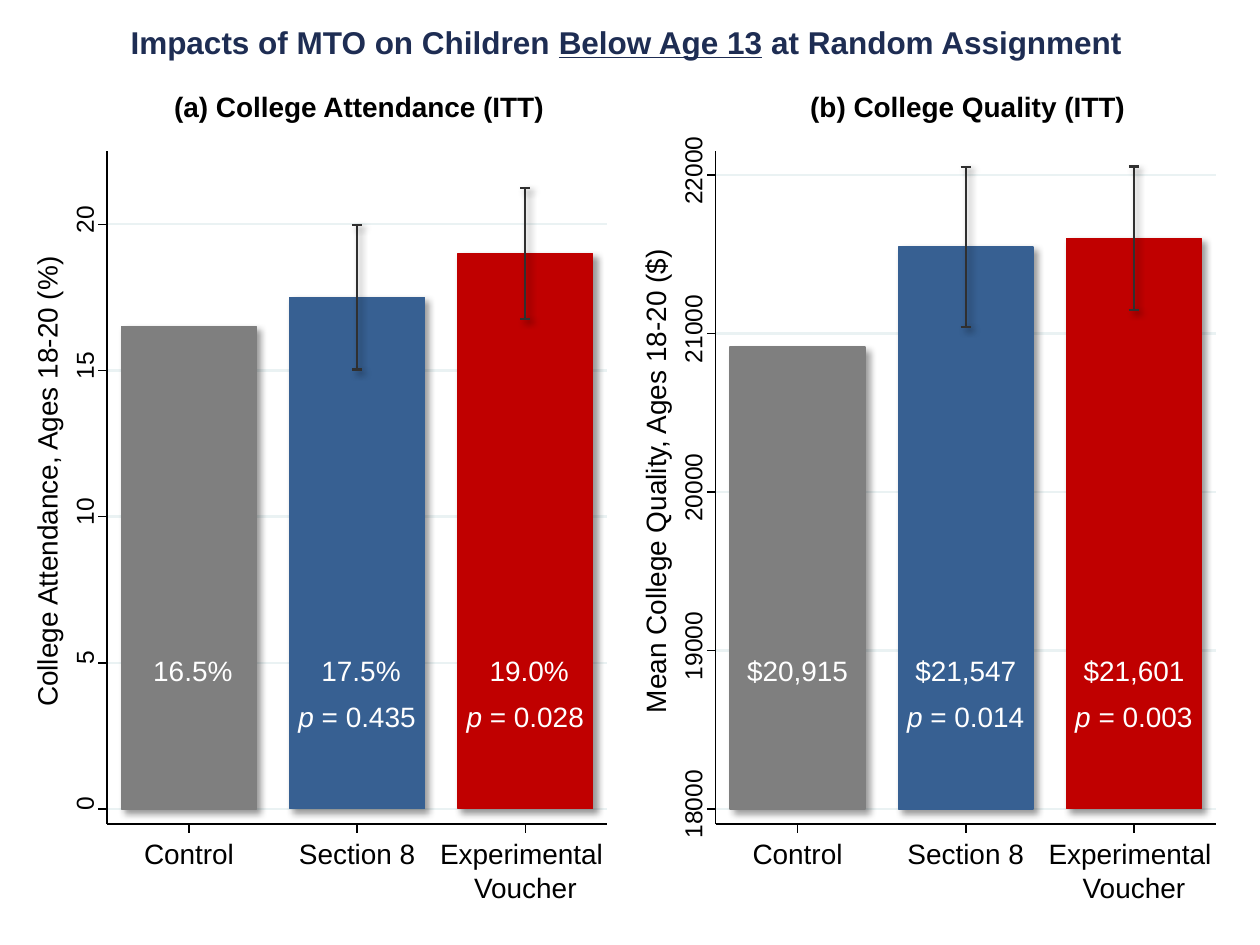
from dataclasses import dataclass
from lxml.etree import SubElement as Sub
from pptx import Presentation
from pptx.dml.color import RGBColor as RGB
from pptx.enum.shapes import MSO_CONNECTOR as Conn, MSO_SHAPE as Kind
from pptx.enum.text import MSO_AUTO_SIZE as Fit, PP_ALIGN as Align
from pptx.oxml.ns import qn
from pptx.util import Inches, Pt


@dataclass(frozen=True)
class Theme:
    font = "Arial"
    navy, black, white = "1E2D53", "000000", "FFFFFF"
    grid, whisk = "EAF2F3", "303030"
    bars = ("7F7F7F", "376092", "C00000")
    head, body, tick = 18, 16, 14
    thin, wide = 0.88, 1.25


@dataclass(frozen=True)
class Box:
    x: float
    y: float
    w: float
    h: float


T = Theme()
NAMES = ("Control", "Section 8", "Experimental \nVoucher")
NAME_W = (0.72, 0.93, 1.37)
BAR_W, STEP, FIRST = 1.07, 1.335, 0.65  # bar width, pitch, first centre
BASE = 0.12  # gap from axis up to the lowest tick


def effects(shape, shadow):
    """Give a shape a soft shadow, or an empty effect list."""
    props = shape._element.spPr
    for old in props.findall(qn("a:effectLst")):
        props.remove(old)
    fx = Sub(props, qn("a:effectLst"))
    if shadow:
        drop = Sub(fx, qn("a:outerShdw"), blurRad=str(Pt(4)), dist=str(Pt(3)),
                   dir="2700000", algn="tl", rotWithShape="0")
        tint = Sub(drop, qn("a:srgbClr"), val=T.black)
        Sub(tint, qn("a:alpha"), val="40000")


def line(slide, x1, y1, x2, y2, color, width, shadow=False):
    rule = slide.shapes.add_connector(
        Conn.STRAIGHT, *(Inches(v) for v in (x1, y1, x2, y2)))
    rule.line.color.rgb = RGB.from_string(color)
    rule.line.width = Pt(width)
    effects(rule, shadow)


def text(slide, cx, cy, w, h, runs, size=T.body, color=T.black, pad=False,
         wrap=False, align=Align.CENTER, turn=0):
    """Place text around a centre; runs are (words, font values) pairs."""
    item = slide.shapes.add_textbox(
        Inches(cx - w / 2), Inches(cy - h / 2), Inches(w), Inches(h))
    item.rotation = turn
    frame = item.text_frame
    form = {"word_wrap": wrap, "auto_size": Fit.SHAPE_TO_FIT_TEXT}
    if not pad:
        form.update(dict.fromkeys(("margin_left", "margin_right",
                                   "margin_top", "margin_bottom"), 0))
    for key, val in form.items():
        setattr(frame, key, val)
    para = frame.paragraphs[0]
    para.alignment = align
    for words, style in runs:
        for n, part in enumerate(words.split("\n")):
            if n:
                para = frame.add_paragraph()
                para.alignment = align
            run = para.add_run()
            run.text = part
            look = {"name": T.font, "size": Pt(size), **style}
            for key, val in look.items():
                setattr(run.font, key, val)
            run.font.color.rgb = RGB.from_string(color)


def heading(slide, box):
    bold = {"bold": True}
    runs = [("Impacts of MTO on Children ", bold),
            ("Below Age 13", {"bold": True, "underline": True}),
            (" at Random Assignment", bold)]
    text(slide, box.x + box.w / 2, box.y + box.h / 2, box.w, box.h, runs,
         T.head, T.navy, pad=True, wrap=True)


def panel(slide, box, data):
    foot, right = box.y + box.h, box.x + box.w
    ticks = data["ticks"]
    unit = data["rise"] / (ticks[-1] - ticks[0])
    mids = [box.x + FIRST + STEP * i for i in range(len(NAMES))]

    def level(value):
        return foot - BASE - (value - ticks[0]) * unit

    # Grid
    for tick in ticks:
        y = level(tick)
        line(slide, box.x, y, right, y, T.grid, T.wide)

    # Bars
    for mid, value, color in zip(mids, data["means"], T.bars):
        top = level(value)
        bar = slide.shapes.add_shape(
            Kind.RECTANGLE, Inches(mid - BAR_W / 2), Inches(top),
            Inches(BAR_W), Inches(level(ticks[0]) - top))
        bar.fill.solid()
        bar.fill.fore_color.rgb = RGB.from_string(color)
        bar.line.color.rgb = RGB.from_string(color)
        bar.line.width = 0
        effects(bar, True)

    # Error bars
    for mid, value, err in zip(mids, data["means"], data["errs"]):
        if err:
            low, high = level(value - err), level(value + err)
            line(slide, mid, high, mid, low, T.whisk, T.wide, True)
            for y in (low, high):
                line(slide, mid - 0.04, y, mid + 0.04, y,
                     T.whisk, T.wide, True)

    # Axes, ticks and their labels
    line(slide, box.x, foot, box.x, box.y, T.black, T.thin)
    line(slide, box.x, foot, right, foot, T.black, T.thin)
    for tick in ticks:
        y, mark = level(tick), str(tick)
        line(slide, box.x, y, box.x - 0.07, y, T.black, T.thin)
        text(slide, box.x - 0.18, y - 0.04, 0.11 * len(mark), 0.24,
             [(mark, {})], T.tick, align=Align.LEFT, turn=270)
    for mid, name, wide in zip(mids, NAMES, NAME_W):
        line(slide, mid, foot, mid, foot + 0.07, T.black, T.thin)
        tall = 0.27 * len(name.split("\n"))
        text(slide, mid, foot + 0.1 + tall / 2, wide, tall, [(name, {})])

    # Titles
    text(slide, box.x + 2, box.y - 0.35, 3.18, 0.37,
         [(data["title"], {"bold": True})], pad=True)
    text(slide, box.x - 0.48, box.y + 2.6, data["span"], 0.27,
         [(data["axis"], {})], align=Align.LEFT, turn=270)

    # Values and p-values inside the bars
    for mid, label, prob in zip(mids, data["labels"], data["probs"]):
        text(slide, mid, foot - 1.22, 1.06, 0.37, [(label, {})],
             color=T.white, pad=True, wrap=True)
        if prob:
            text(slide, mid + 0.04, foot - 0.85, 1.21, 0.37,
                 [("p ", {"italic": True}), (f"= {prob}", {})],
                 color=T.white, pad=True, wrap=True, align=Align.LEFT)


PANELS = (
    {"title": "(a) College Attendance (ITT)",
     "axis": "College Attendance, Ages 18-20 (%)", "span": 3.62,
     "ticks": range(0, 21, 5), "rise": 4.64,
     "means": (16.5, 17.5, 19.0), "errs": (0, 2.47, 2.24),
     "labels": (" 16.5%", " 17.5%", " 19.0%"),
     "probs": ("", "0.435", "0.028")},
    {"title": "(b) College Quality (ITT)",
     "axis": "Mean College Quality, Ages 18-20 ($)", "span": 3.72,
     "ticks": range(18000, 22001, 1000), "rise": 5.03,
     "means": (20915, 21547, 21601), "errs": (0, 505, 453),
     "labels": ("$20,915", "$21,547", "$21,601"),
     "probs": ("", "0.014", "0.003")},
)


def main():
    deck = Presentation()
    deck.slide_width, deck.slide_height = Inches(10), Inches(7.5)
    slide = deck.slides.add_slide(deck.slide_layouts[6])
    heading(slide, Box(-0.03, 0.13, 10, 0.4))
    for i, data in enumerate(PANELS):
        panel(slide, Box(0.85 + 4.83 * i, 1.2, 3.97, 5.34), data)
    deck.save("out.pptx")


if __name__ == "__main__":
    main()
